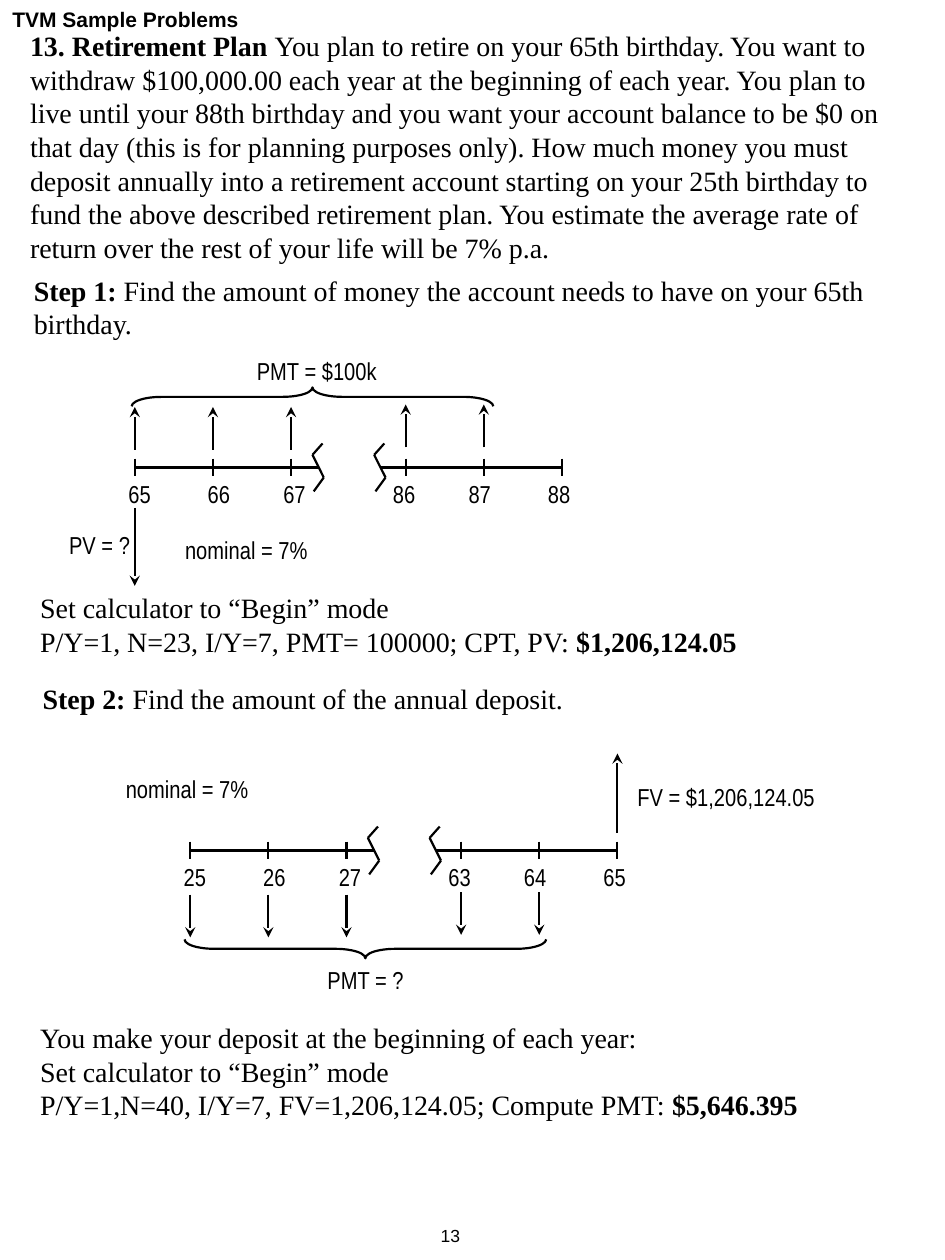
from lxml import etree
from pptx import Presentation
from pptx.dml.color import RGBColor
from pptx.enum.shapes import MSO_CONNECTOR, MSO_SHAPE
from pptx.enum.text import MSO_AUTO_SIZE, PP_ALIGN
from pptx.oxml.ns import qn
from pptx.util import Inches, Pt

STRAIGHT = MSO_CONNECTOR.STRAIGHT
LEFT_BRACE = MSO_SHAPE.LEFT_BRACE
GROW, NO_FIT = MSO_AUTO_SIZE.SHAPE_TO_FIT_TEXT, MSO_AUTO_SIZE.NONE
LEFT, RIGHT = PP_ALIGN.LEFT, PP_ALIGN.RIGHT
BLACK = RGBColor(0, 0, 0)
SERIF, SANS, NARROW = "Times New Roman", "Arial", "Arial Narrow"

# Each paragraph is a list of (text, bold) runs.
HEADER = [[("TVM Sample Problems", True)]]
PAGE_NUMBER = [[("13", False)]]
BODY = [
    ((0.14, 0.18, 7.18, 1.97), [[
        ("13. Retirement Plan ", True),
        ("You plan to retire on your 65th birthday. You want to withdraw "
         "$100,000.00 each year at the beginning of each year. You plan to live "
         "until your 88th birthday and you want your account balance to be $0 on "
         "that day (this is for planning purposes only). How much money you must "
         "deposit annually into a retirement account starting on your 25th "
         "birthday to fund the above described retirement plan. You estimate the "
         "average rate of return over the rest of your life will be 7% p.a.",
         False)]]),
    ((0.17, 2.12, 7.33, 0.64), [[
        ("Step 1:", True),
        (" Find the amount of money the account needs to have on your 65th "
         "birthday.", False)]]),
    ((0.22, 4.64, 7.28, 0.64), [
        [("Set calculator to “Begin” mode", False)],
        [("P/Y=1, N=23, I/Y=7, PMT= 100000; CPT, PV: ", False),
         ("$1,206,124.05", True)]]),
    ((0.24, 5.36, 5.14, 0.37), [[
        ("Step 2:", True),
        (" Find the amount of the annual deposit.", False)]]),
    ((0.22, 8.05, 7.28, 0.9), [
        [("You make your deposit at the beginning of each year:", False)],
        [("Set calculator to “Begin” mode", False)],
        [("P/Y=1,N=40, I/Y=7, FV=1,206,124.05; Compute PMT: ", False),
         ("$5,646.395", True)]]),
]

# Offsets below are inches from the left end of each timeline.
TIMELINES = [
    dict(origin=(1.07, 3.71), ages=(65, 66, 67, 86, 87, 88),
         payment=(-0.14, -0.48), brace=(1.41, -0.56), turn=90,
         lump=(0, 0.32, 0.94),
         labels=[("PMT = $100k", 0.87, -0.93, 1.16),
                 ("PV = ?", -0.62, 0.45, 0.69),
                 ("nominal = 7%", 0.3, 0.49, 1.18)]),
    dict(origin=(1.51, 6.75), ages=(25, 26, 27, 63, 64, 65),
         payment=(0.35, 0.69), brace=(1.39, 0.78), turn=270,
         lump=(3.39, -0.14, -0.77),
         labels=[("PMT = ?", 0.99, 0.86, 0.81),
                 ("FV = $1,206,124.05", 3.45, -0.59, 1.65),
                 ("nominal = 7%", -0.61, -0.66, 1.18)]),
]
YEAR = 0.62
RIGHT_HALF = 2.15
TICKS = [half + i * YEAR for half in (0, RIGHT_HALF) for i in range(3)]
LABEL_X = (-0.15, 0.48, 1.08, 1.95, 2.55, 3.18)
AXES = [(0, 1.46), (1.95, 3.39)]
BREAK = [(0.08, -0.19), (0, -0.1), (0.09, 0.08), (0.01, 0.19)]
BREAK_X = (1.41, 1.9)
TICK = 0.07
RAISE = 0.02  # payments after the break sit slightly higher
BRACE_W, BRACE_H = 0.15, 2.87


def add_text(shapes, box, paragraphs, size, font, align=LEFT, wrap=True, fit=GROW):
    tf = shapes.add_textbox(*map(Inches, box)).text_frame
    tf.word_wrap = wrap
    tf.auto_size = fit
    for i, runs in enumerate(paragraphs):
        p = tf.add_paragraph() if i else tf.paragraphs[0]
        p.alignment = align
        for text, bold in runs:
            r = p.add_run()
            r.text = text
            r.font.size = Pt(size)
            r.font.name = font
            r.font.bold = bold
            r.font.color.rgb = BLACK


def add_line(shapes, x1, y1, x2, y2, arrow=False):
    c = shapes.add_connector(STRAIGHT, *map(Inches, (x1, y1, x2, y2)))
    c.line.color.rgb = BLACK
    c.line.width = Pt(1.25)
    if arrow:
        etree.SubElement(c.line._get_or_add_ln(), qn("a:tailEnd"), type="stealth")
    etree.SubElement(c._element.spPr, qn("a:effectLst"))


def add_brace(shapes, cx, cy, turn):
    sp = shapes.add_shape(LEFT_BRACE, Inches(cx - BRACE_W / 2),
                          Inches(cy - BRACE_H / 2), Inches(BRACE_W), Inches(BRACE_H))
    sp.adjustments[0] = 1.57
    sp.rotation = turn
    sp.fill.background()
    sp.line.color.rgb = BLACK
    sp.line.width = Pt(1.25)
    sp.shadow.inherit = False


def add_timeline(slide, origin, ages, payment, brace, turn, lump, labels):
    x, y = origin
    shapes = slide.shapes.add_group_shape().shapes
    for start, end in AXES:
        add_line(shapes, x + start, y, x + end, y)
    for age, tick, label_x in zip(ages, TICKS, LABEL_X):
        add_line(shapes, x + tick, y - TICK, x + tick, y + TICK)
        add_text(shapes, (x + label_x, y + 0.04, 0.38, 0.33),
                 [[(str(age), False)]], 14, NARROW, wrap=False)
    for tick in TICKS[:-1]:
        lift = RAISE if tick >= RIGHT_HALF else 0
        start, end = (y + offset - lift for offset in payment)
        add_line(shapes, x + tick, start, x + tick, end, arrow=True)
    for bx in BREAK_X:
        for (x1, y1), (x2, y2) in zip(BREAK, BREAK[1:]):
            add_line(shapes, x + bx + x1, y + y1, x + bx + x2, y + y2)
    lump_x, start, end = lump
    add_line(shapes, x + lump_x, y + start, x + lump_x, y + end, arrow=True)
    add_brace(shapes, x + brace[0], y + brace[1], turn)
    for text, dx, dy, width in labels:
        add_text(shapes, (x + dx, y + dy, width, 0.33), [[(text, False)]],
                 14, NARROW, wrap=False)


def main():
    prs = Presentation()
    prs.slide_width, prs.slide_height = Inches(7.5), Inches(10)
    slide = prs.slides.add_slide(prs.slide_layouts[6])
    add_text(slide.shapes, (0, 0, 3.25, 0.25), HEADER, 12, SANS, fit=NO_FIT)
    for box, paragraphs in BODY:
        add_text(slide.shapes, box, paragraphs, 16, SERIF)
    for timeline in TIMELINES:
        add_timeline(slide, **timeline)
    add_text(slide.shapes, (3.25, 9.67, 0.5, 0.33), PAGE_NUMBER, 10, SANS,
             align=RIGHT, fit=NO_FIT)
    prs.save("out.pptx")


if __name__ == "__main__":
    main()
